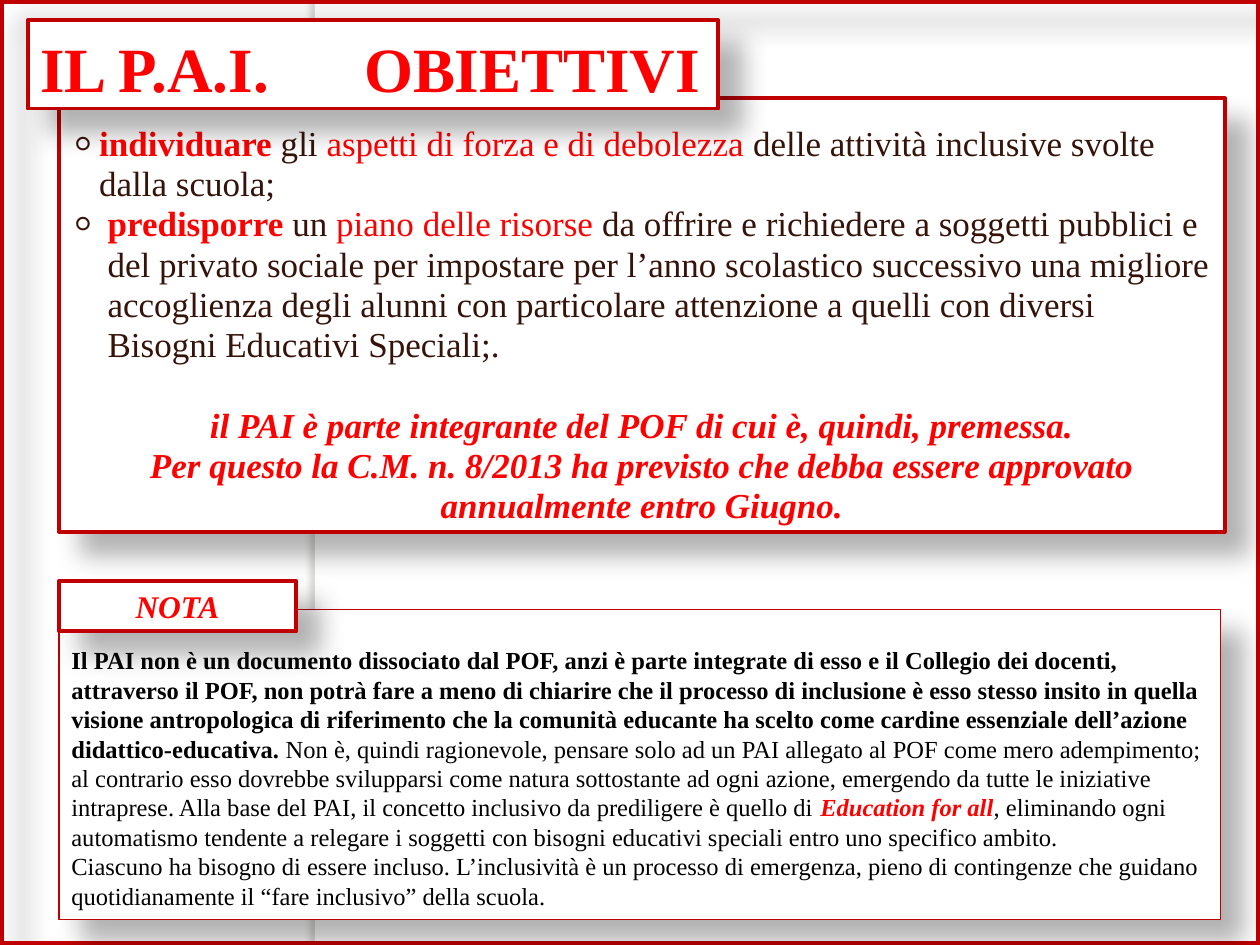
from lxml import etree
from pptx import Presentation
from pptx.dml.color import RGBColor
from pptx.enum.shapes import MSO_SHAPE
from pptx.enum.text import MSO_ANCHOR, PP_ALIGN
from pptx.oxml.ns import qn
from pptx.util import Cm, Pt

FONT = "Times New Roman"
RED, CRIMSON, BROWN, BLACK, WHITE = "FF0000", "C00000", "361309", "000000", "FFFFFF"
PANEL_SHADOW = {"color": BLACK, "alpha": 30, "blur": 15, "distance": 18, "angle": 45}
SPINE_SHADOW = {"color": "736F63", "alpha": 25, "blur": 3, "distance": 3, "angle": 180}

PLAIN = {"color": BROWN}
ACCENT = {"color": RED}
STRONG = {"color": RED, "bold": True}
SLOGAN = {"color": RED, "bold": True, "italic": True}
NOTE = {"color": BLACK}
NOTE_BOLD = {"color": BLACK, "bold": True}

GOALS = [
    (0.56, [("individuare", STRONG), (" gli ", PLAIN),
            ("aspetti di forza e di debolezza ", ACCENT),
            ("delle attività inclusive svolte dalla scuola;", PLAIN)]),
    (0.73, [("predisporre", STRONG), (" un ", PLAIN), ("piano delle risorse ", ACCENT),
            ("da offrire e richiedere a soggetti pubblici e del privato sociale per "
             "impostare per l’anno scolastico successivo una migliore accoglienza degli "
             "alunni con particolare attenzione a quelli con diversi Bisogni Educativi "
             "Speciali;.", PLAIN)]),
]
SLOGANS = [
    "il PAI è parte integrante del POF di cui è, quindi, premessa.",
    "Per questo la C.M. n. 8/2013 ha previsto che debba essere approvato "
    "annualmente entro Giugno.",
]
NOTES = [
    [("Il PAI non è un documento dissociato dal POF, anzi è parte integrate di esso e il "
      "Collegio dei docenti, attraverso il POF, non potrà fare a meno di chiarire che il "
      "processo di inclusione è esso stesso insito in quella visione antropologica di "
      "riferimento che la comunità educante ha scelto come cardine essenziale "
      "dell’azione didattico-educativa. ", NOTE_BOLD),
     ("Non è, quindi ragionevole, pensare solo ad un PAI allegato al POF come mero "
      "adempimento; al contrario esso dovrebbe svilupparsi come natura sottostante ad "
      "ogni azione, emergendo da tutte le iniziative intraprese. Alla base del PAI, il "
      "concetto inclusivo da prediligere è quello di ", NOTE),
     ("Education for all", SLOGAN),
     (", eliminando ogni automatismo tendente a relegare i soggetti con bisogni "
      "educativi speciali entro uno specifico ambito.", NOTE)],
    [("Ciascuno ha bisogno di essere incluso. L’inclusività è un processo di emergenza, "
      "pieno di contingenze che guidano quotidianamente il “fare inclusivo” della "
      "scuola.", NOTE)],
]


def rgb(value):
    return RGBColor.from_string(value)


def add_shadow(shape, shadow):
    shape.shadow.inherit = False
    effects = shape._element.spPr.find(qn("a:effectLst"))
    outer = etree.SubElement(
        effects, qn("a:outerShdw"), blurRad=str(Pt(shadow["blur"])),
        dist=str(Pt(shadow["distance"])), dir=str(shadow["angle"] * 60000),
        algn="tl", rotWithShape="0")
    color = etree.SubElement(outer, qn("a:srgbClr"), val=shadow["color"])
    etree.SubElement(color, qn("a:alpha"), val=str(shadow["alpha"] * 1000))


def add_box(slide, box, fill=WHITE, line_width=2.25, shadow=PANEL_SHADOW,
            anchor=MSO_ANCHOR.TOP):
    shape = slide.shapes.add_shape(MSO_SHAPE.RECTANGLE, *map(Cm, box))
    if fill:
        shape.fill.solid()
        shape.fill.fore_color.rgb = rgb(fill)
    else:
        shape.fill.background()
    if line_width:
        shape.line.color.rgb = rgb(CRIMSON)
        shape.line.width = Pt(line_width)
    else:
        shape.line.fill.background()
    add_shadow(shape, shadow)
    shape.text_frame.word_wrap = True
    shape.text_frame.vertical_anchor = anchor
    return shape


def add_paragraph(text_frame, runs, size, **formats):
    """Fill the first paragraph if it is still empty, else append one."""
    first = text_frame.paragraphs[0]
    paragraph = text_frame.add_paragraph() if first.runs else first
    for name, value in {"alignment": PP_ALIGN.LEFT, **formats}.items():
        setattr(paragraph, name, value)
    for text, style in runs:
        run = paragraph.add_run()
        run.text = text
        run.font.color.rgb = rgb(style["color"])
        settings = {"name": FONT, "size": Pt(size), "bold": style.get("bold", False),
                    "italic": style.get("italic", False)}
        for name, value in settings.items():
            setattr(run.font, name, value)
    return paragraph


def add_bullet(paragraph, indent):
    properties = paragraph._p.get_or_add_pPr()
    properties.set("marL", str(Cm(indent)))
    properties.set("indent", str(-Cm(indent - 0.05)))
    color = etree.SubElement(properties, qn("a:buClr"))
    etree.SubElement(color, qn("a:srgbClr"), val=BROWN)
    etree.SubElement(properties, qn("a:buSzPct"), val="160000")
    etree.SubElement(properties, qn("a:buFont"), typeface=FONT)
    etree.SubElement(properties, qn("a:buChar"), char="◦")


def add_tab_stop(paragraph, position):
    tabs = etree.SubElement(paragraph._p.get_or_add_pPr(), qn("a:tabLst"))
    etree.SubElement(tabs, qn("a:tab"), pos=str(Cm(position)), algn="l")


def draw_background(slide, box):
    left, top, width, height = box
    add_box(slide, (left + width / 4, top, 0.2, height), line_width=0, shadow=SPINE_SHADOW)
    add_box(slide, box, fill=None, line_width=4.5)


def draw_objectives(slide, box):
    left, top, width, height = box
    panel = add_box(slide, (left + 0.63, top + 1.57, width - 0.63, height - 1.57),
                    anchor=MSO_ANCHOR.BOTTOM)
    for indent, runs in GOALS:
        add_bullet(add_paragraph(panel.text_frame, runs, 20, line_spacing=Pt(23)), indent)
    for gap, text in zip((23, 0), SLOGANS):
        add_paragraph(panel.text_frame, [(text, SLOGAN)], 20, line_spacing=Pt(23),
                      space_before=Pt(gap), alignment=PP_ALIGN.CENTER)
    title = add_box(slide, (left, top, 13.92, 1.78))
    heading = add_paragraph(title.text_frame, [("IL P.A.I.\tOBIETTIVI", STRONG)], 36,
                            line_spacing=Pt(45))
    add_tab_stop(heading, 6.53)


def draw_note(slide, box):
    left, top, width, height = box
    panel = add_box(slide, (left, top + 0.58, width, height - 0.58), line_width=0.75)
    panel.text_frame.margin_top = Cm(0.72)
    for runs in NOTES:
        add_paragraph(panel.text_frame, runs, 14)
    tag = add_box(slide, (left, top, 4.78, 1.02))
    add_paragraph(tag.text_frame, [("NOTA", SLOGAN)], 18, alignment=PP_ALIGN.CENTER)


def main():
    presentation = Presentation()
    presentation.slide_width, presentation.slide_height = Cm(25.4), Cm(19.05)
    slide = presentation.slides.add_slide(presentation.slide_layouts[6])
    draw_background(slide, (0, 0, 25.4, 19.05))
    draw_objectives(slide, (0.56, 0.41, 24.13, 10.31))
    draw_note(slide, (1.19, 11.71, 23.42, 6.83))
    presentation.save("out.pptx")


if __name__ == "__main__":
    main()
